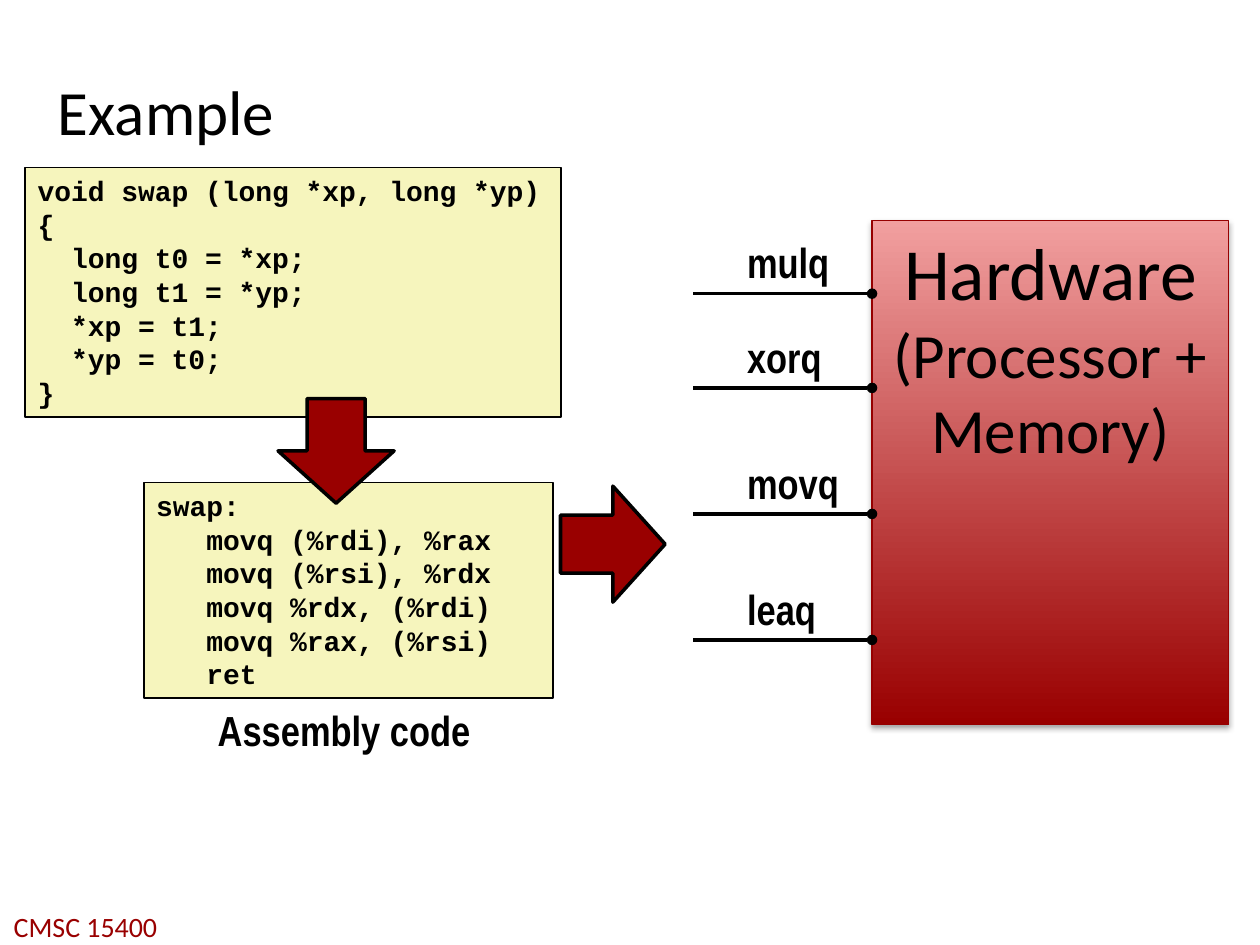
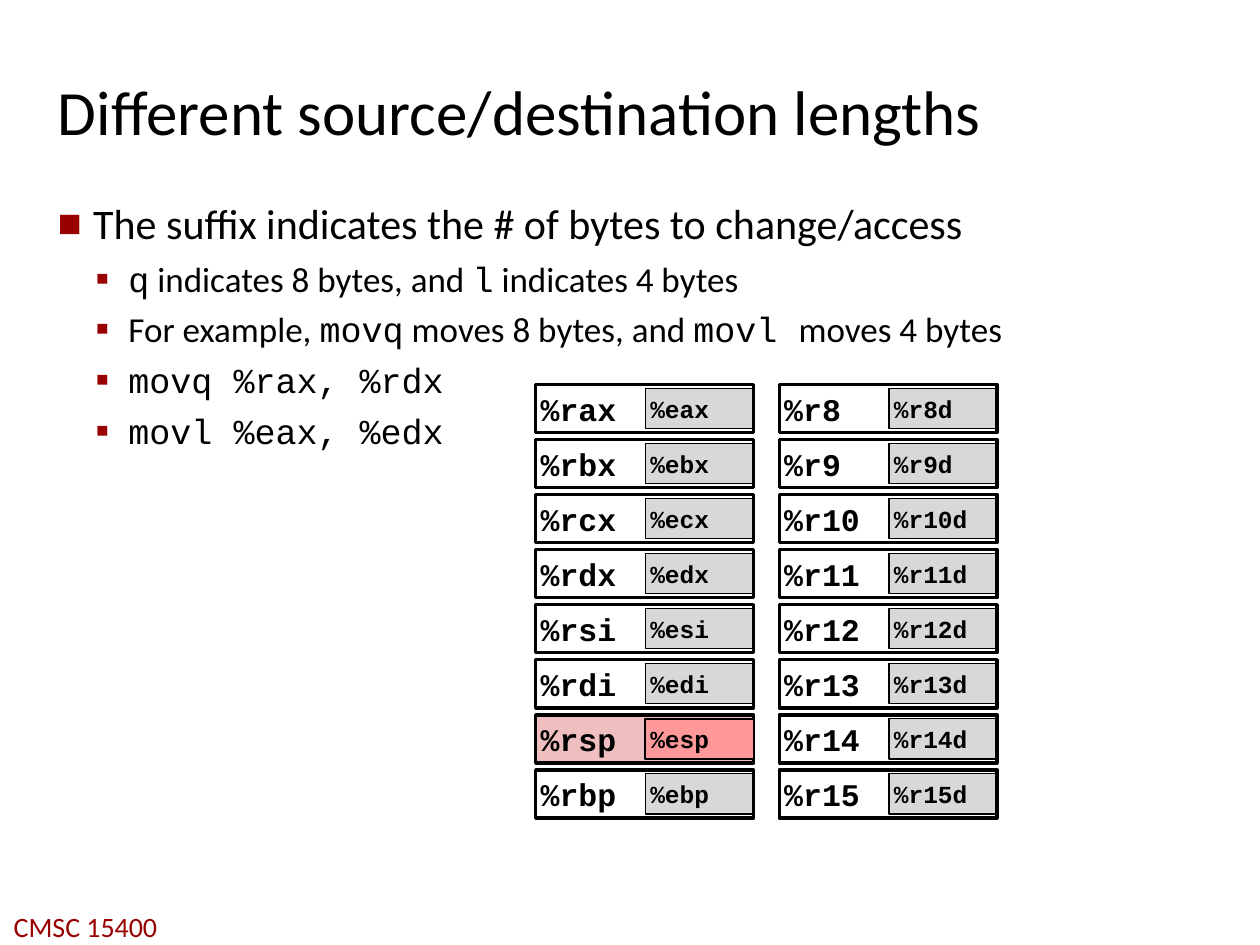
"""Build two slides on assembly code and operand lengths."""
from lxml.etree import SubElement
from pptx import Presentation
from pptx.dml.color import RGBColor
from pptx.enum.shapes import MSO_CONNECTOR, MSO_SHAPE
from pptx.enum.text import MSO_ANCHOR, PP_ALIGN
from pptx.oxml.ns import qn
from pptx.util import Cm, Pt

COLORS = {
    "text": "000000", "accent": "990000", "code": "F6F5BD",
    "hw_top": "F19F9F", "hw_line": "960000", "half": "D8D8D8",
    "stack": "EFBFBF", "stack_half": "FF9999",
}
SANS, NARROW, MONO = "Calibri", "Arial Narrow", "Courier New"
FOOTER = "CMSC 15400"

C_CODE = [
    "void swap (long *xp, long *yp)",
    "{",
    "  long t0 = *xp;",
    "  long t1 = *yp;",
    "  *xp = t1;",
    "  *yp = t0;",
    "}",
]
ASM_CODE = [
    "swap:",
    "   movq (%rdi), %rax",
    "   movq (%rsi), %rdx",
    "   movq %rdx, (%rdi)",
    "   movq %rax, (%rsi)",
    "   ret",
]
CODE_BOXES = [
    (C_CODE, (0.51, 3.38, 10.8, 5.03)),
    (ASM_CODE, (2.9, 9.73, 8.25, 4.34)),
]
ARROWS = [((5.72, 7.92, 2.11, 2.34), 90), ((11.3, 9.8, 2.11, 2.34), 0)]
HARDWARE = [[("Hardware", {"size": 42})], "(Processor + Memory)"]
HARDWARE_BOX = (17.58, 4.45, 7.19, 10.16)
INSTRUCTIONS = [("mulq", 5.92), ("xorq", 7.82), ("movq", 10.36), ("leaq", 12.9)]

M = {"font": MONO}
BULLETS = [
    (0, ["The suffix indicates the # of bytes to change/access"]),
    (1, [("q", M), " indicates 8 bytes, and ", ("l", M), " indicates 4 bytes"]),
    (1, ["For example, ", ("movq", M), " moves 8 bytes, and ", ("movl ", M),
         "moves 4 bytes"]),
    (1, [("movq %rax, %rdx", M)]),
    (1, [("movl %eax, %edx", M)]),
]
BULLET_LEVELS = [
    {"char": "■", "scale": 60, "left": 0.71, "hang": 0.71, "size": 24, "before": 6},
    {"char": "▪", "scale": 110, "left": 1.42, "hang": 0.66, "size": 20, "before": 5},
]
REGISTERS = [
    [("%rax", "%eax"), ("%rbx", "%ebx"), ("%rcx", "%ecx"), ("%rdx", "%edx"),
     ("%rsi", "%esi"), ("%rdi", "%edi"), ("%rsp", "%esp"), ("%rbp", "%ebp")],
    [("%r8", "%r8d"), ("%r9", "%r9d"), ("%r10", "%r10d"), ("%r11", "%r11d"),
     ("%r12", "%r12d"), ("%r13", "%r13d"), ("%r14", "%r14d"), ("%r15", "%r15d")],
]
REG_LEFT, REG_TOP, REG_W, REG_H = 10.8, 7.75, 4.39, 0.97
COLUMN_STEP, ROW_STEP = 4.91, 1.11
HALF_DX, HALF_DY, HALF_W, HALF_H = 2.21, 0.08, 2.18, 0.81
STACK_POINTER = "%rsp"


def rgb(name):
    return RGBColor.from_string(COLORS[name])


def write(s, paras, size=16, font=SANS, color="text", bold=False,
          align=PP_ALIGN.LEFT, anchor=MSO_ANCHOR.TOP, inset=None, wrap=True):
    """Fill a shape with paragraphs: strings, or lists of strings and (text, format) runs."""
    tf = s.text_frame
    tf.word_wrap = wrap
    tf.vertical_anchor = anchor
    if inset is not None:
        tf.margin_left = tf.margin_right = tf.margin_top = tf.margin_bottom = Cm(inset)
    for i, para in enumerate(paras):
        p = tf.paragraphs[0] if i == 0 else tf.add_paragraph()
        p.alignment = align
        for part in [para] if isinstance(para, str) else para:
            text, fmt = (part, {}) if isinstance(part, str) else part
            r = p.add_run()
            r.text = text
            r.font.size = Pt(fmt.get("size", size))
            r.font.name = fmt.get("font", font)
            r.font.bold = bold
            r.font.color.rgb = rgb(color)


def add_text(slide, box, paras, **fmt):
    s = slide.shapes.add_textbox(*map(Cm, box))
    write(s, paras, **fmt)
    return s


def add_block(slide, box, fill=None, line="text", width=1, kind=MSO_SHAPE.RECTANGLE):
    s = slide.shapes.add_shape(kind, *map(Cm, box))
    s.shadow.inherit = False
    if fill:
        s.fill.solid()
        s.fill.fore_color.rgb = rgb(fill)
    else:
        s.fill.background()
    s.line.color.rgb = rgb(line)
    s.line.width = Pt(width)
    return s


def add_hardware(slide):
    s = add_block(slide, HARDWARE_BOX, line="hw_line", width=0.75)
    s.fill.gradient()
    s.fill.gradient_angle = 90
    for stop, name, position in zip(s.fill.gradient_stops, ("accent", "hw_top"), (0, 1)):
        stop.color.rgb = rgb(name)
        stop.position = position
    effects = s._element.spPr.find(qn("a:effectLst"))
    shadow = SubElement(effects, qn("a:outerShdw"), blurRad=str(Pt(3.1)),
                        dist=str(Pt(1.8)), dir="5400000", rotWithShape="0")
    tint = SubElement(shadow, qn("a:srgbClr"), val=COLORS["text"])
    SubElement(tint, qn("a:alpha"), val="35000")
    write(s, HARDWARE, size=36, align=PP_ALIGN.CENTER)


def add_pin(slide, y):
    c = slide.shapes.add_connector(MSO_CONNECTOR.STRAIGHT, Cm(HARDWARE_BOX[0]), Cm(y),
                                   Cm(13.97), Cm(y))
    c.line.color.rgb = rgb("text")
    c.line.width = Pt(2)
    SubElement(c.line._get_or_add_ln(), qn("a:headEnd"), type="oval")
    SubElement(c._element.spPr, qn("a:effectLst"))


def add_bullet(p, level):
    style = BULLET_LEVELS[level]
    p.level = level
    pPr = p._p.get_or_add_pPr()
    pPr.set("marL", str(Cm(style["left"])))
    pPr.set("indent", str(-Cm(style["hang"])))
    color = SubElement(pPr, qn("a:buClr"))
    SubElement(color, qn("a:srgbClr"), val=COLORS["accent"])
    SubElement(pPr, qn("a:buSzPct"), val=str(style["scale"] * 1000))
    SubElement(pPr, qn("a:buFont"), typeface=SANS)
    SubElement(pPr, qn("a:buChar"), char=style["char"])
    for r in p.runs:
        r.font.size = Pt(style["size"])


def add_register(slide, left, top, name, half):
    is_stack = name == STACK_POINTER
    whole_part = (name, (left, top, REG_W, REG_H), "stack" if is_stack else None, 2, 18)
    half_part = (half, (left + HALF_DX, top + HALF_DY, HALF_W, HALF_H),
                 "stack_half" if is_stack else "half", 1 if is_stack else 0.75, 14)
    parts = [whole_part, half_part] if is_stack else [half_part, whole_part]
    for text, box, fill, width, size in parts:
        s = add_block(slide, box, fill, width=width)
        write(s, [text], size=size, font=MONO, bold=True,
              anchor=MSO_ANCHOR.MIDDLE, inset=0.1)


def new_slide(prs, title):
    slide = prs.slides.add_slide(prs.slide_layouts[6])
    add_text(slide, (-0.08, 18.21, 3.61, 0.94), [FOOTER], color="accent",
             align=PP_ALIGN.CENTER, wrap=False)
    add_text(slide, (1.07, 0.71, 23.29, 3.02), [title], size=36,
             anchor=MSO_ANCHOR.MIDDLE, inset=0.1)
    return slide


def build_example(prs):
    slide = new_slide(prs, "Example")
    for code, box in CODE_BOXES:
        write(add_block(slide, box, "code"), code, font=MONO, bold=True)
    for box, rotation in ARROWS:
        s = add_block(slide, box, "accent", width=2, kind=MSO_SHAPE.RIGHT_ARROW)
        s.rotation = rotation
    add_hardware(slide)
    label = {"size": 24, "font": NARROW, "bold": True}
    for name, y in INSTRUCTIONS:
        add_text(slide, (14.81, y - 1.27, 2.74, 1.27), [name], **label)
        add_pin(slide, y)
    add_text(slide, (4.14, 14.07, 5.66, 1.27), ["Assembly code"], wrap=False, **label)


def build_lengths(prs):
    slide = new_slide(prs, "Different source/destination lengths")
    body = add_text(slide, (1.07, 3.89, 23.29, 15.09), [runs for _, runs in BULLETS],
                    inset=0.1)
    for i, (p, (level, _)) in enumerate(zip(body.text_frame.paragraphs, BULLETS)):
        add_bullet(p, level)
        if i:
            p.space_before = Pt(BULLET_LEVELS[level]["before"])
    for col, registers in enumerate(REGISTERS):
        for row, (name, half) in enumerate(registers):
            add_register(slide, REG_LEFT + col * COLUMN_STEP, REG_TOP + row * ROW_STEP,
                         name, half)


def main():
    prs = Presentation()
    prs.slide_width, prs.slide_height = Cm(25.4), Cm(19.05)
    build_example(prs)
    build_lengths(prs)
    prs.save("out.pptx")


if __name__ == "__main__":
    main()
